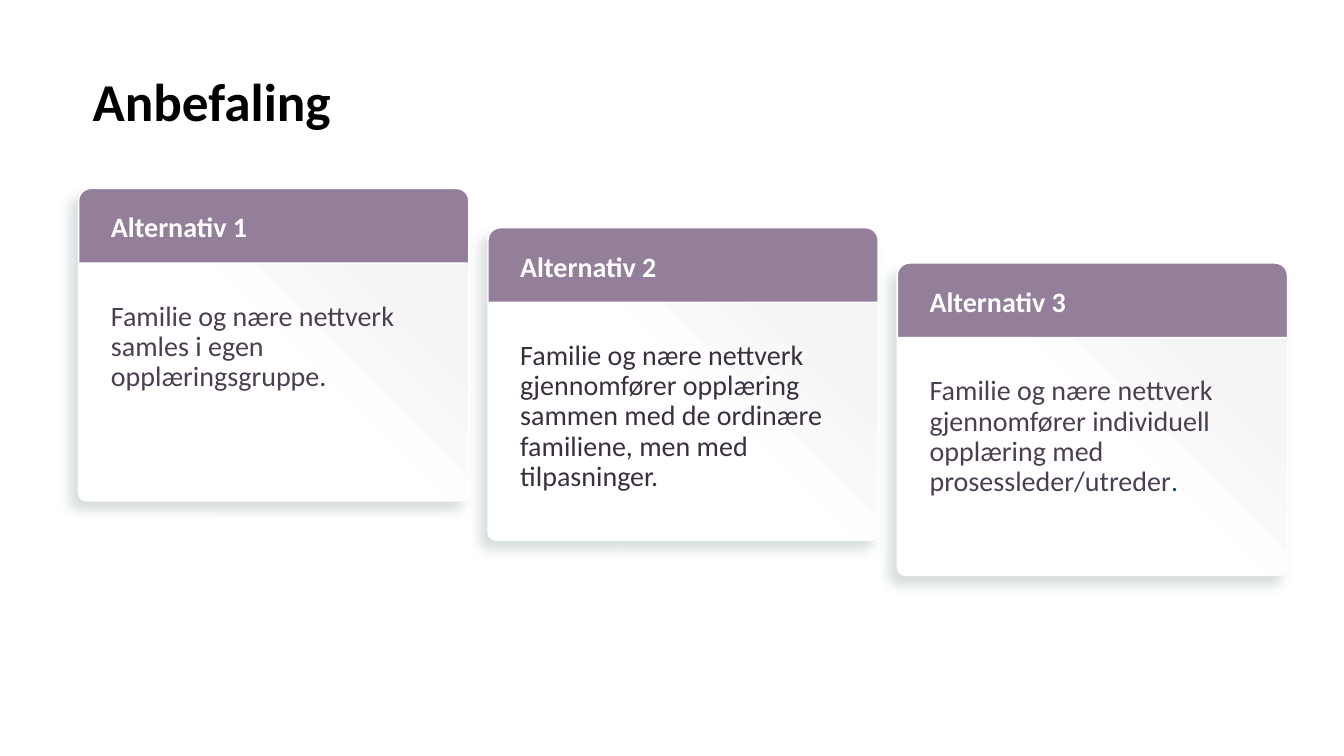
from dataclasses import dataclass

from lxml.etree import SubElement
from pptx import Presentation
from pptx.dml.color import RGBColor
from pptx.enum.shapes import MSO_SHAPE as Preset
from pptx.enum.text import MSO_ANCHOR as Anchor
from pptx.oxml.ns import qn
from pptx.shapes.autoshape import Shape
from pptx.slide import Slide
from pptx.text.text import TextFrame, _Paragraph as Paragraph
from pptx.util import Inches, Pt

FONT = "Calibri"
WHITE, MAUVE, PLUM, DARK_PLUM, TEAL = "FFFFFF", "947F9B", "4B3E50", "392F3D", "00516A"
SHADOW = "3C5E5D"
PANEL_STOPS = [(0, WHITE), (47, WHITE), (77, "F5F5F5"), (100, "F2F2F2")]

CARD_LEFT, CARD_STEP = 0.78, 4.06
CARD_WIDTH, PANEL_HEIGHT, HEADER_HEIGHT = 3.87, 3.08, 0.74


@dataclass(frozen=True)
class Part:
    text: str
    color: str


@dataclass(frozen=True)
class Alternative:
    heading: str
    top: float
    body: tuple[Part, ...]


ALTERNATIVES = [
    Alternative("Alternativ 1", 1.87, (
        Part("Familie og nære nettverk samles i egen opplæringsgruppe.", PLUM),
    )),
    Alternative("Alternativ 2", 2.26, (
        Part("Familie og nære nettverk gjennomfører opplæring sammen med de "
             "ordinære familiene, men med tilpasninger.", DARK_PLUM),
    )),
    Alternative("Alternativ 3", 2.61, (
        Part("Familie og nære nettverk gjennomfører individuell opplæring med "
             "prosessleder/utreder", PLUM),
        Part(".", TEAL),
    )),
]


def rgb(color: str) -> RGBColor:
    return RGBColor.from_string(color)


def add_text_frame(slide: Slide, left: float, top: float,
                   width: float, height: float) -> TextFrame:
    frame = slide.shapes.add_textbox(
        Inches(left), Inches(top), Inches(width), Inches(height)).text_frame
    frame.word_wrap = True
    frame.margin_left = frame.margin_top = frame.margin_right = frame.margin_bottom = 0
    return frame


def add_run(paragraph: Paragraph, part: Part, size: float, bold: bool = False) -> None:
    paragraph.line_spacing = 0.9
    run = paragraph.add_run()
    run.text = part.text
    run.font.name, run.font.size, run.font.bold = FONT, Pt(size), bold
    run.font.color.rgb = rgb(part.color)


def add_outlined(slide: Slide, preset: Preset, left: float, top: float,
                 height: float) -> Shape:
    """Add a card-wide shape with a thin white outline."""
    shape = slide.shapes.add_shape(
        preset, Inches(left), Inches(top), Inches(CARD_WIDTH), Inches(height))
    shape.shadow.inherit = False
    shape.line.color.rgb = rgb(WHITE)
    shape.line.width = Pt(1)
    return shape


def fill_panel(panel: Shape) -> None:
    """Shade the panel towards its upper right corner."""
    panel.fill.gradient()
    panel.fill.gradient_angle = 45
    stops = next(panel.element.spPr.iter(qn("a:gsLst")))
    for stop in list(stops):
        stops.remove(stop)
    for percent, color in PANEL_STOPS:
        stop = SubElement(stops, qn("a:gs"), pos=str(percent * 1000))
        SubElement(stop, qn("a:srgbClr"), val=color)


def cast_shadow(panel: Shape) -> None:
    """Drop a soft shadow down to the left."""
    effects = panel.element.spPr.find(qn("a:effectLst"))
    shadow = SubElement(effects, qn("a:outerShdw"), blurRad=str(Pt(8)), dist=str(Pt(8)),
                        dir=str(135 * 60000), algn="tr", rotWithShape="0")
    color = SubElement(shadow, qn("a:srgbClr"), val=SHADOW)
    SubElement(color, qn("a:alpha"), val="20000")


def add_card(slide: Slide, left: float, alternative: Alternative) -> None:
    top = alternative.top
    panel = add_outlined(slide, Preset.ROUNDED_RECTANGLE, left, top + 0.02, PANEL_HEIGHT)
    panel.adjustments[0] = 0.027
    fill_panel(panel)
    cast_shadow(panel)

    header = add_outlined(slide, Preset.ROUND_2_SAME_RECTANGLE, left, top, HEADER_HEIGHT)
    header.fill.solid()
    header.fill.fore_color.rgb = rgb(MAUVE)

    frame = add_text_frame(slide, left + 0.32, top + 0.25, 3.42, 2.33)
    add_run(frame.paragraphs[0], Part(alternative.heading, WHITE), 20, bold=True)
    body = frame.add_paragraph()
    body.space_before = Pt(41.5)
    for part in alternative.body:
        add_run(body, part, 20)


def main() -> None:
    deck = Presentation()
    deck.slide_width, deck.slide_height = Inches(13.33), Inches(7.5)
    slide = deck.slides.add_slide(deck.slide_layouts[6])

    title = add_text_frame(slide, 0.92, 0.74, 11.5, 0.58)
    title.vertical_anchor = Anchor.MIDDLE
    add_run(title.paragraphs[0], Part("Anbefaling", "000000"), 38, bold=True)

    for column, alternative in enumerate(ALTERNATIVES):
        add_card(slide, CARD_LEFT + column * CARD_STEP, alternative)
    deck.save("out.pptx")


if __name__ == "__main__":
    main()
